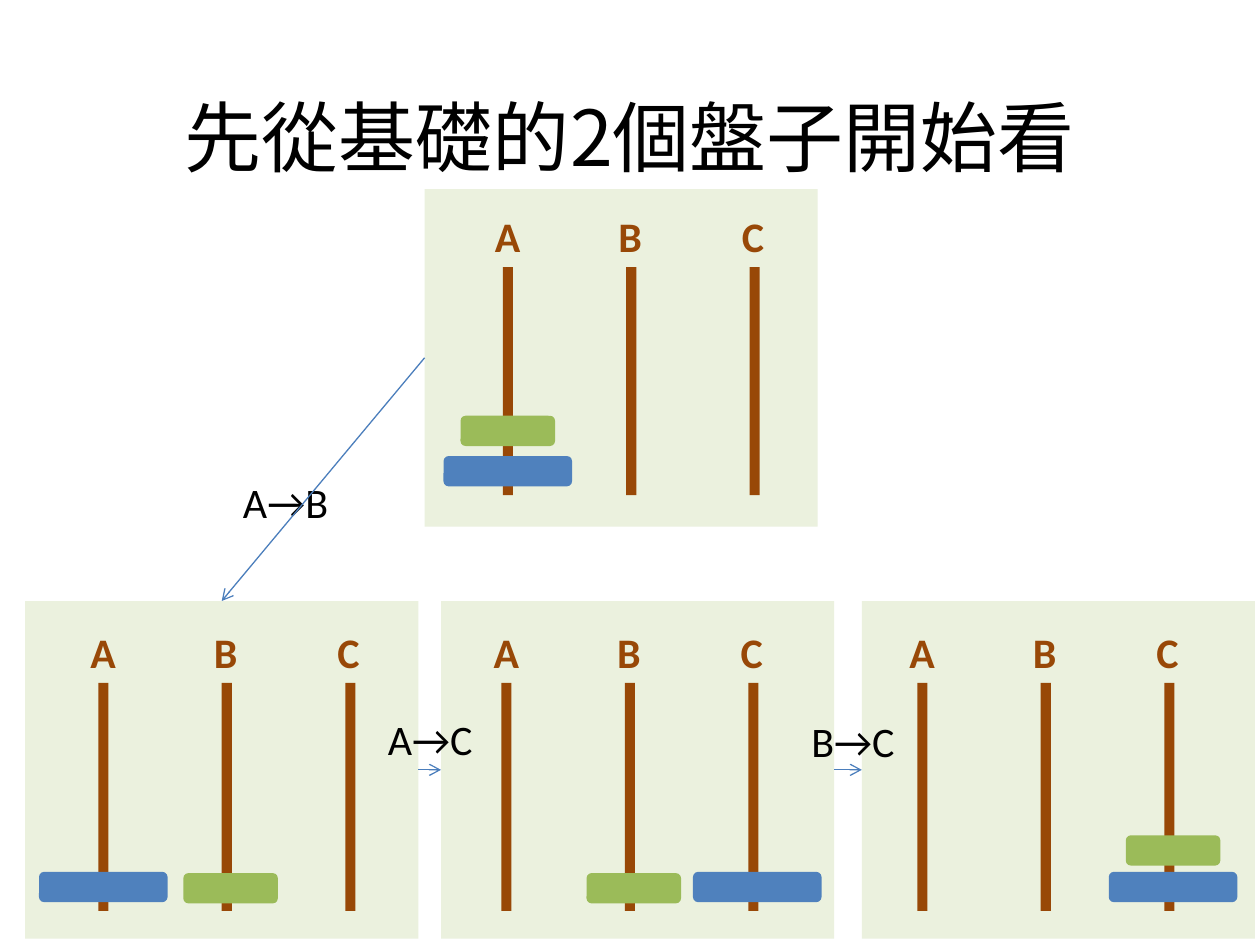
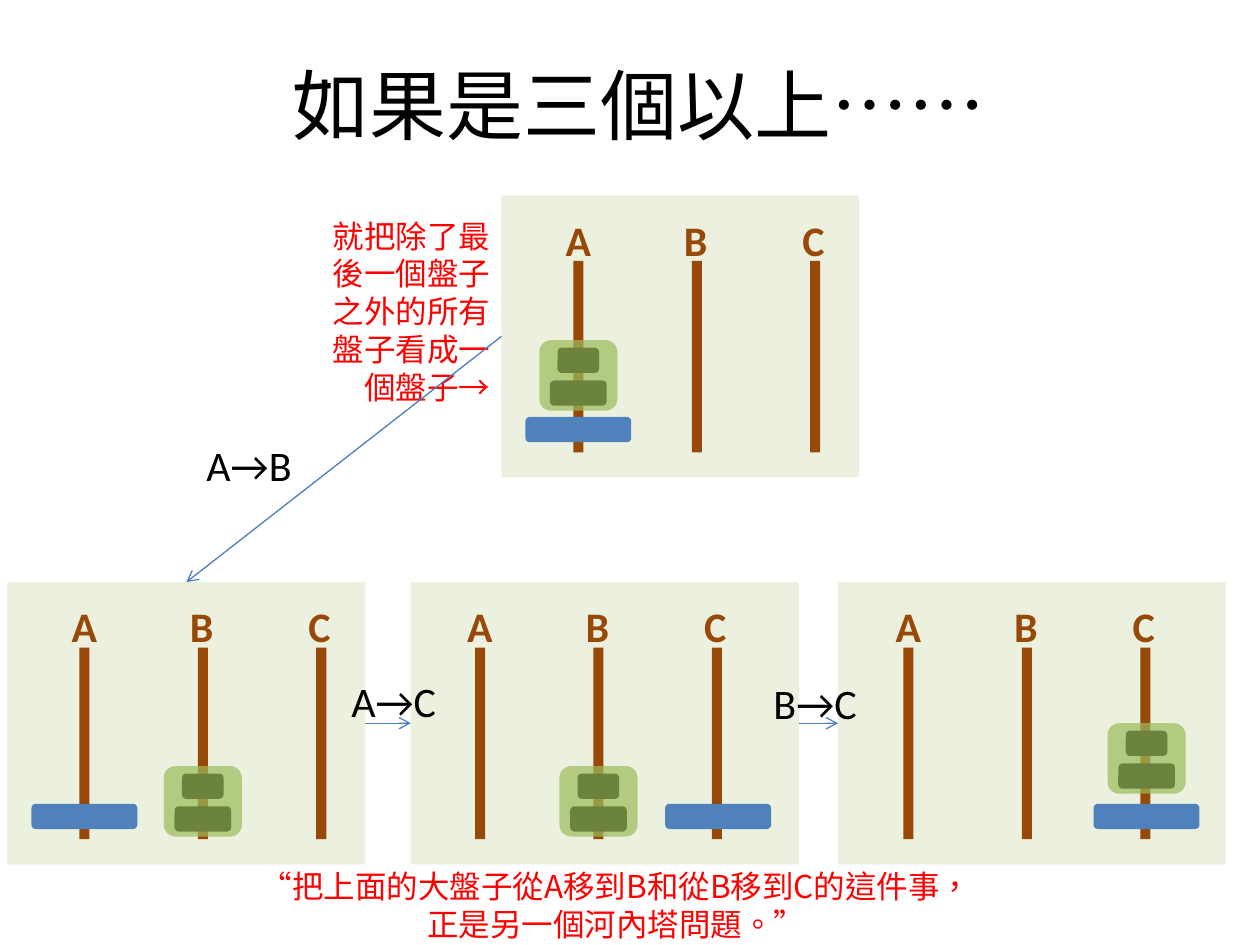
"""Build two slides that explain the Tower of Hanoi moves."""

from lxml.etree import SubElement
from pptx import Presentation
from pptx.dml.color import RGBColor
from pptx.enum.shapes import MSO_CONNECTOR, MSO_SHAPE
from pptx.enum.text import MSO_ANCHOR, MSO_AUTO_SIZE, PP_ALIGN
from pptx.oxml.ns import qn
from pptx.util import Inches, Pt

PANEL, PEG, BIG, SMALL, INNER = "EBF1DE", "984807", "4F81BD", "9BBB59", "000000"
BLACK, RED, ARROW = "000000", "FF0000", "4B7EBC"
LATIN, CHINESE = "Calibri", "Noto Sans CJK SC"
PEG_NAMES = "ABC"
PEG_WIDTH = 0.08
LABEL_WIDTH = 0.4

TITLE = {"size": Pt(44), "name": CHINESE, "color": BLACK}
NOTE = {"size": Pt(18), "name": CHINESE, "color": RED}
MOVE = {"size": Pt(24), "name": LATIN, "color": BLACK}
PEG_LABEL = {"size": Pt(24), "name": LATIN, "color": PEG, "bold": True}

SLIDES = [
    {
        "title": "先從基礎的2個盤子開始看",
        "title_box": (0.5, 0.45, 9, 1.25),
        "panel_height": 2.68,
        "peg_gap": 0.98,
        "peg_height": 1.81,
        "label_height": 0.5,
        "disk_shift": {"A": 0, "B": 0.03, "C": 0.03},
        "big_disk": (1.02, 0.24),
        "small_disk": (0.75, 0.24),
        "inner_disks": [],
        "opacity": 100,
        "big_drop": 1.5,
        "panels": [
            {"left": 3.37, "top": 1.5, "width": 3.12, "peg": (0.66, 0.62), "big": "A", "small": ("A", 1.18)},
            {"left": 0.2, "top": 4.77, "width": 3.12, "peg": (0.62, 0.65), "big": "A", "small": ("B", 1.51)},
            {"left": 3.5, "top": 4.77, "width": 3.12, "peg": (0.52, 0.65), "big": "C", "small": ("B", 1.51)},
            {"left": 6.84, "top": 4.77, "width": 3.12, "peg": (0.48, 0.65), "big": "C", "small": ("C", 1.21)},
        ],
        "moves": [("A→B", 1.83, 3.73), ("A→C", 2.98, 5.61), ("B→C", 6.34, 5.63)],
        "notes": [],
    },
    {
        "title": "如果是三個以上……",
        "title_box": (0.5, 0.3, 9.15, 1.05),
        "panel_height": 2.24,
        "peg_gap": 0.94,
        "peg_height": 1.52,
        "label_height": 0.42,
        "disk_shift": {"A": 0, "B": 0, "C": 0.01},
        "big_disk": (0.84, 0.2),
        "small_disk": (0.62, 0.56),
        "inner_disks": [(0.45, 0.2, 0.32), (0.33, 0.2, 0.06)],
        "opacity": 70,
        "big_drop": 1.24,
        "panels": [
            {"left": 3.98, "top": 1.55, "width": 2.84, "peg": (0.61, 0.52), "big": "A", "small": ("A", 0.63)},
            {"left": 0.06, "top": 4.62, "width": 2.84, "peg": (0.61, 0.52), "big": "A", "small": ("B", 0.94)},
            {"left": 3.26, "top": 4.62, "width": 3.08, "peg": (0.55, 0.52), "big": "C", "small": ("B", 0.94)},
            {"left": 6.65, "top": 4.62, "width": 3.08, "peg": (0.56, 0.52), "big": "C", "small": ("C", 0.6)},
        ],
        "moves": [("A→B", 1.54, 3.44), ("A→C", 2.69, 5.31), ("B→C", 6.04, 5.33)],
        "notes": [
            (["就把除了最後一個盤子之外的所有盤子看成一個盤子→"], (2.42, 1.67, 1.57, 1.62), PP_ALIGN.RIGHT),
            (["“把上面的大盤子從A移到B和從B移到C的這件事，", "正是另一個河內塔問題。”"],
             (1.61, 6.83, 6.56, 0.71), PP_ALIGN.CENTER),
        ],
    },
]


def color(hex_text):
    """Turn a hex string into a colour."""
    return RGBColor.from_string(hex_text)


def inches(*lengths):
    """Turn numbers into lengths."""
    return [Inches(length) for length in lengths]


def write(text_frame, lines, style, alignment):
    """Fill a text frame with one styled paragraph per line."""
    for number, line in enumerate(lines):
        paragraph = text_frame.add_paragraph() if number else text_frame.paragraphs[0]
        paragraph.alignment = alignment
        run = paragraph.add_run()
        run.text = line
        for name, value in style.items():
            if name == "color":
                run.font.color.rgb = color(value)
            else:
                setattr(run.font, name, value)
        if style["name"] == CHINESE:
            properties = run._r.get_or_add_rPr()
            properties.set("lang", "zh-TW")
            SubElement(properties, qn("a:ea"), typeface=CHINESE)


def add_text(shapes, lines, box, style, alignment=PP_ALIGN.LEFT, wrap=False):
    """Add a text box that grows with its text."""
    text_frame = shapes.add_textbox(*inches(*box)).text_frame
    text_frame.word_wrap = wrap
    text_frame.auto_size = MSO_AUTO_SIZE.SHAPE_TO_FIT_TEXT
    write(text_frame, lines, style, alignment)


def add_block(shapes, kind, box, fill, opacity=100):
    """Add a plain filled shape without outline or shadow."""
    shape = shapes.add_shape(kind, *inches(*box))
    shape.shadow.inherit = False
    shape.fill.solid()
    shape.fill.fore_color.rgb = color(fill)
    shape.line.fill.background()
    if opacity < 100:
        fill_color = shape._element.spPr.find(".//" + qn("a:srgbClr"))
        SubElement(fill_color, qn("a:alpha"), val=str(opacity * 1000))
    return shape


def add_disk(shapes, center, top, size, fill, opacity=100):
    """Add a rounded disk centred on a horizontal position."""
    width, height = size
    box = (center - width / 2, top, width, height)
    add_block(shapes, MSO_SHAPE.ROUNDED_RECTANGLE, box, fill, opacity)


def add_tower(slide, content, panel):
    """Draw one state of the puzzle and return its background panel."""
    box = (panel["left"], panel["top"], panel["width"], content["panel_height"])
    background = add_block(slide.shapes, MSO_SHAPE.RECTANGLE, box, PANEL)
    shapes = slide.shapes.add_group_shape().shapes
    first_peg, peg_top = panel["left"] + panel["peg"][0], panel["top"] + panel["peg"][1]
    label_height = content["label_height"]
    disk_centers = {}
    for number, name in enumerate(PEG_NAMES):
        center = first_peg + number * content["peg_gap"]
        disk_centers[name] = center + content["disk_shift"][name]
        add_block(shapes, MSO_SHAPE.RECTANGLE,
                  (center - PEG_WIDTH / 2, peg_top, PEG_WIDTH, content["peg_height"]), PEG)
        add_text(shapes, [name],
                 (center - LABEL_WIDTH / 2, peg_top - label_height, LABEL_WIDTH, label_height), PEG_LABEL)
    add_disk(shapes, disk_centers[panel["big"]], peg_top + content["big_drop"], content["big_disk"], BIG)
    small_peg, small_drop = panel["small"]
    center, small_top = disk_centers[small_peg], peg_top + small_drop
    for width, height, drop in content["inner_disks"]:
        add_disk(shapes, center, small_top + drop, (width, height), INNER)
    add_disk(shapes, center, small_top, content["small_disk"], SMALL, content["opacity"])
    return background


def add_arrow(slide, start, start_side, end, end_side):
    """Join two panels with an arrow."""
    connector = slide.shapes.add_connector(MSO_CONNECTOR.STRAIGHT, 0, 0, 0, 0)
    connector.begin_connect(start, start_side)
    connector.end_connect(end, end_side)
    connector.line.color.rgb = color(ARROW)
    connector.line.width = Pt(0.75)
    SubElement(connector.line._get_or_add_ln(), qn("a:tailEnd"), type="arrow")
    SubElement(connector._element.spPr, qn("a:effectLst"))


def add_slide(presentation, content):
    """Add a slide with its title, towers, notes, moves and arrows."""
    slide = presentation.slides.add_slide(presentation.slide_layouts[5])
    title = slide.shapes.title
    for name, value in zip(("left", "top", "width", "height"), inches(*content["title_box"])):
        setattr(title, name, value)
    title.text_frame.vertical_anchor = MSO_ANCHOR.MIDDLE
    write(title.text_frame, [content["title"]], TITLE, PP_ALIGN.CENTER)
    towers = [add_tower(slide, content, panel) for panel in content["panels"]]
    for lines, box, alignment in content["notes"]:
        add_text(slide.shapes, lines, box, NOTE, alignment, wrap=True)
    for text, left, top in content["moves"]:
        add_text(slide.shapes, [text], (left, top, 0.91, 0.5), MOVE)
    sides = [(1, 0), (3, 1), (3, 1)]
    for start, end, (start_side, end_side) in zip(towers, towers[1:], sides):
        add_arrow(slide, start, start_side, end, end_side)


def main():
    """Build and save the presentation."""
    presentation = Presentation()
    presentation.slide_width, presentation.slide_height = inches(10, 7.5)
    for content in SLIDES:
        add_slide(presentation, content)
    presentation.save("out.pptx")


if __name__ == "__main__":
    main()
